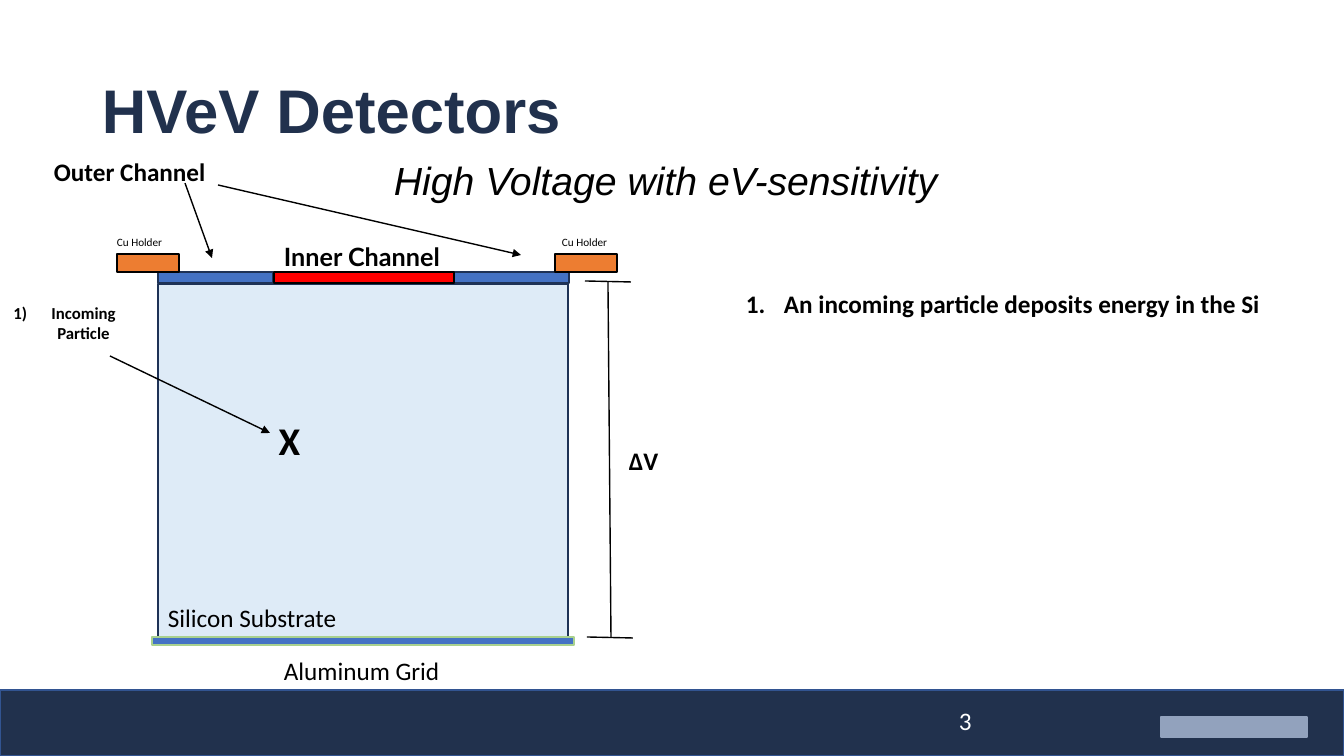
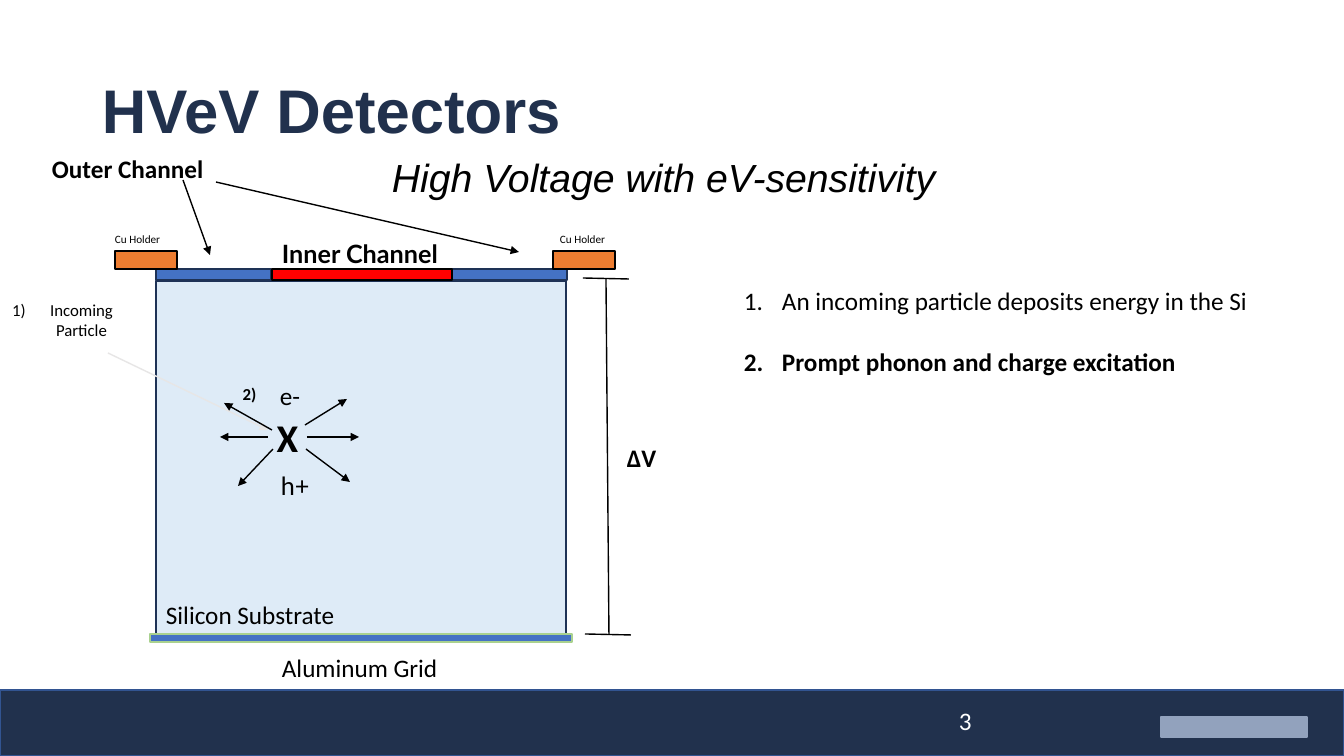
from lxml import etree
from pptx import Presentation
from pptx.dml.color import RGBColor
from pptx.enum.shapes import MSO_CONNECTOR, MSO_SHAPE
from pptx.enum.text import MSO_ANCHOR, PP_ALIGN
from pptx.oxml.ns import qn
from pptx.util import Emu, Pt

RECT = MSO_SHAPE.RECTANGLE
LINE = MSO_CONNECTOR.STRAIGHT
LEFT, MID = PP_ALIGN.LEFT, PP_ALIGN.CENTER
CORE = MSO_ANCHOR.MIDDLE

# Scale and shared style
WIDE, HIGH = 1344, 756
UNIT = 12192000 / WIDE
NAVY, EDGE, BLUE = "21314D", "1E3256", "4472C4"
BLACK, WHITE, FADED = "000000", "FFFFFF", "E7E6E6"
COPPER, SLATE = "ED7D31", "92A2BD"
HANG = 38

# Footer band and plain badge: left, top, width, height, fill, line
FOOTER = [
    (0, 690, WIDE, 66, NAVY, "325491"),
    (1161, 717, 146, 20, SLATE, SLATE),
]
# Detector parts: left, top, width, height, fill, line
PARTS = [
    (158, 284, 410, 354, "DEEBF7", EDGE),
    (158, 272, 115, 11, BLUE, EDGE),
    (454, 272, 115, 11, BLUE, EDGE),
    (274, 272, 180, 11, "FF0000", BLACK),
    (117, 254, 62, 18, COPPER, BLACK),
    (555, 254, 62, 18, COPPER, BLACK),
    (152, 637, 422, 8, BLUE, "A9D18E"),
]
# Labels: left, top, width, height, text, size, bold, font
LABELS = [
    (158, 597, 266, 40, "Silicon Substrate", 18, False, "Calibri"),
    (44, 151, 311, 40, "Outer Channel", 18, True, "Calibri"),
    (274, 236, 300, 40, "Inner Channel", 18, True, "Lato"),
    (107, 230, 237, 24, "Cu Holder", 8, False, "Calibri"),
    (552, 230, 237, 24, "Cu Holder", 8, False, "Calibri"),
    (274, 650, 281, 40, "Aluminum Grid", 18, False, "Calibri"),
    (619, 440, 65, 40, "ΔV", 18, True, "Calibri"),
]
PAIR = [
    (272, 378, 126, 40, "e-", 18, False, "Calibri"),
    (273, 468, 126, 40, "h+", 18, False, "Lato"),
]
# Lines: start x, start y, end x, end y
GAUGE = [(608, 282, 611, 637), (585, 281, 631, 282), (587, 637, 633, 638)]
POINTS = [(185, 183, 212, 258), (218, 185, 521, 255)]
TRACK = (110, 356, 270, 433)
BURST = [
    (307, 428, 349, 402), (308, 452, 352, 485), (270, 440, 222, 440),
    (275, 452, 240, 489), (274, 433, 226, 406), (309, 440, 361, 440),
]
STEPS = ["An incoming particle deposits energy in the Si",
         "Prompt phonon and charge excitation"]


def hue(code):
    return RGBColor.from_string(code)


def write(slide, x, y, w, h, text, size, bold=False, font="Calibri",
          color=BLACK, align=LEFT, count=None):
    box = slide.shapes.add_textbox(*[Emu(round(v * UNIT)) for v in (x, y, w, h)])
    frame = box.text_frame
    frame.word_wrap = True
    frame.text = text
    for para in frame.paragraphs:
        para.alignment = align
        if count:
            props = para._p.get_or_add_pPr()
            props.set("marL", str(round(HANG * UNIT)))
            props.set("indent", str(round(-HANG * UNIT)))
            etree.SubElement(props, qn("a:buFont"), typeface="+mj-lt")
            etree.SubElement(props, qn("a:buAutoNum"), type=count)
        for run in para.runs:
            run.font.size = Pt(size)
            run.font.bold = bold
            run.font.name = font
            run.font.color.rgb = hue(color)
    return frame


deck = Presentation()
deck.slide_width = Emu(round(WIDE * UNIT))
deck.slide_height = Emu(round(HIGH * UNIT))

for step, dx, dy in [(1, 0, 0), (2, -2, -3)]:
    slide = deck.slides.add_slide(deck.slide_layouts[6])

    # Footer and detector parts
    rects = FOOTER + [(x + dx, y + dy, *rest) for x, y, *rest in PARTS]
    for *place, fill, edge in rects:
        shape = slide.shapes.add_shape(RECT, *[Emu(round(v * UNIT)) for v in place])
        shape.shadow.inherit = False
        shape.fill.solid()
        shape.fill.fore_color.rgb = hue(fill)
        shape.line.color.rgb = hue(edge)
        shape.line.width = Pt(1)

    # Page number
    write(slide, 949, 700, 302, 40, "3", 18, color=WHITE)

    # Title and subtitle
    frame = write(slide, 92, 41, 1159, 146, "HVeV Detectors", 44, True, "Arial", NAVY)
    frame.vertical_anchor = CORE
    frame.paragraphs[0].line_spacing = 0.9
    frame = write(slide, 86 + dx, 157 + dy, 1159, 60, "High Voltage with eV-sensitivity",
                  28, font="Arial", align=MID)
    frame.paragraphs[0].line_spacing = 0.9
    frame.paragraphs[0].runs[0].font.italic = True

    # Gauge, pointers and particle tracks
    lines = [(ends, BLACK, False) for ends in GAUGE]
    lines += [(ends, BLACK, True) for ends in POINTS]
    lines.append((TRACK, BLACK if step == 1 else FADED, True))
    if step == 2:
        lines += [(ends, BLACK, True) for ends in BURST]
    for (x1, y1, x2, y2), color, arrow in lines:
        ends = (x1 + dx, y1 + dy, x2 + dx, y2 + dy)
        line = slide.shapes.add_connector(LINE, *[Emu(round(v * UNIT)) for v in ends])
        line.line.color.rgb = hue(color)
        line.line.width = Pt(1)
        props = line.element.spPr
        if arrow:
            etree.SubElement(props.find(qn("a:ln")), qn("a:tailEnd"), type="triangle")
        etree.SubElement(props, qn("a:effectLst"))

    # Detector labels
    for x, y, *rest in LABELS + (PAIR if step == 2 else []):
        write(slide, x + dx, y + dy, *rest)
    write(slide, 215 + dx, 411 + dy, 149, 57, "X", 28, True, align=MID)
    write(slide, -10 + dx, 298 + dy, 149, 50, "Incoming Particle", 12, step == 1,
          align=MID, count="arabicParenR")
    if step == 2:
        write(slide, 177 + dx, 382 + dy, 149, 30, "2)", 12, True, align=MID)

    # Numbered steps, the current one in bold
    frame = write(slide, 736 + dx, 283 + dy, 573, 132, "\n".join(STEPS[:step]), 18,
                  count="arabicPeriod")
    for para in frame.paragraphs[1:]:
        para.space_before = Pt(22)
    frame.paragraphs[-1].runs[0].font.bold = True

deck.save("out.pptx")
